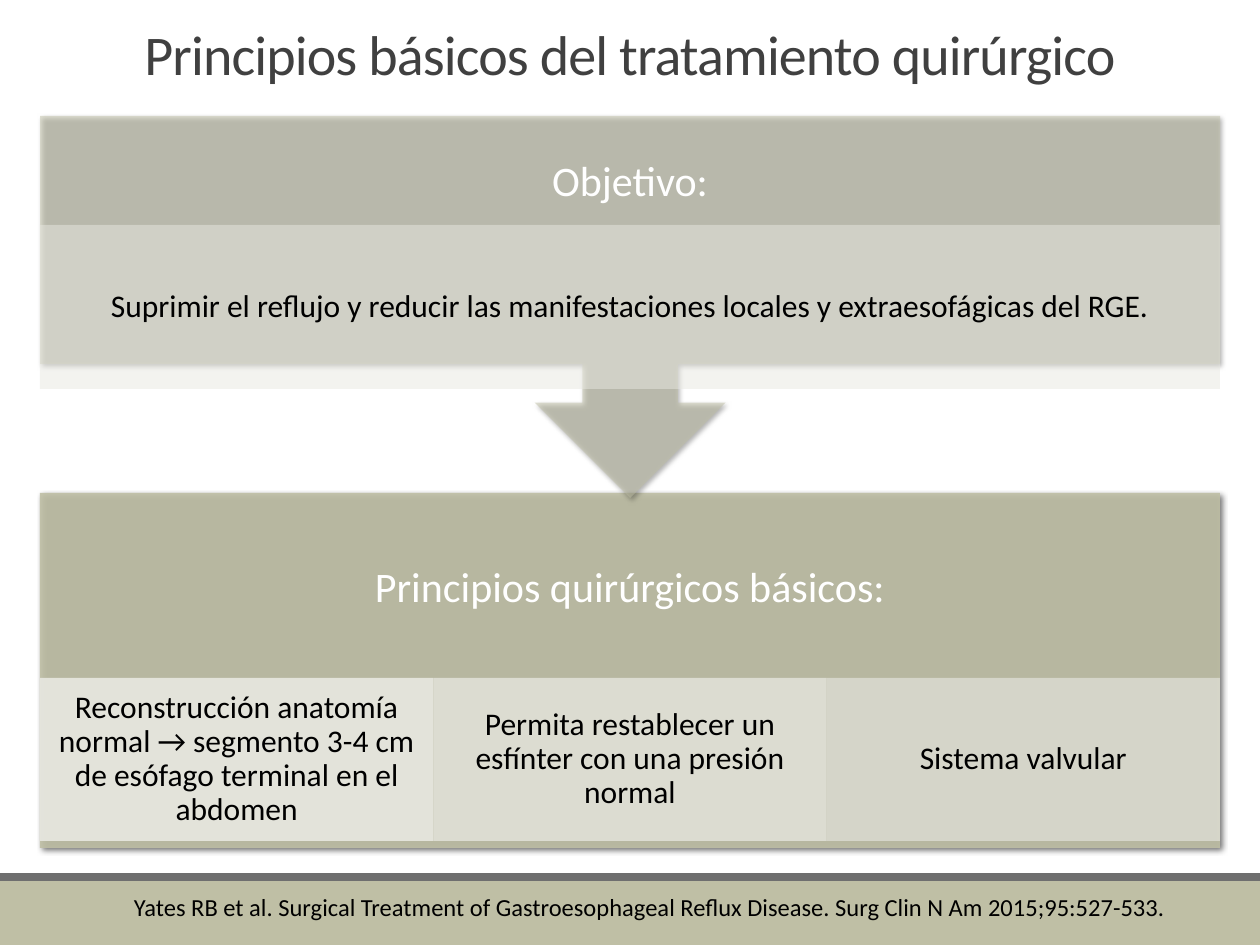
from dataclasses import dataclass

from lxml import etree
from pptx import Presentation
from pptx import util as u
from pptx.dml.color import RGBColor
from pptx.enum import shapes, text
from pptx.oxml.ns import qn

PX_PER_INCH = 126


@dataclass(frozen=True)
class Theme:
    """Colours, font and type sizes of the slide."""
    font: str = "Calibri"
    olive: str = "BFBFA5"
    pale: str = "E8E8E1"
    rule: str = "6F6F6F"
    title: str = "404040"
    light: str = "FFFFFF"
    dark: str = "000000"
    title_size: int = 32
    heading_size: int = 24
    body_size: int = 18
    citation_size: int = 14


THEME = Theme()
PRINCIPLES = [
    ("Reconstrucción anatomía normal → segmento 3-4 cm de esófago terminal en el abdomen", 90),
    ("Permita restablecer un esfínter con una presión normal", 77),
    ("Sistema valvular", 63),
]


def px(length):
    """Turn pixels into EMU."""
    return u.Emu(round(length * u.Inches(1) / PX_PER_INCH))


def add_panel(slide, box, colour, opacity=100, kind=shapes.MSO_SHAPE.RECTANGLE):
    """Add a borderless filled shape with the given opacity in percent."""
    panel = slide.shapes.add_shape(kind, *map(px, box))
    panel.shadow.inherit = False
    panel.fill.solid()
    panel.fill.fore_color.rgb = RGBColor.from_string(colour)
    panel.line.fill.background()
    if opacity < 100:
        tint = panel.element.spPr.find(".//" + qn("a:srgbClr"))
        etree.SubElement(tint, qn("a:alpha"), val=str(opacity * 1000))
    return panel


def add_shadow(panel):
    """Give a panel a soft shadow to the lower right."""
    effects = panel.element.spPr.find(qn("a:effectLst"))
    shadow = etree.SubElement(
        effects, qn("a:outerShdw"), blurRad=str(u.Pt(3)), dist=str(u.Pt(2)),
        dir=str(45 * 60000), algn="ctr", rotWithShape="0")
    tint = etree.SubElement(shadow, qn("a:srgbClr"), val=THEME.dark)
    etree.SubElement(tint, qn("a:alpha"), val="60000")


def write(shape, words, size, colour, align=text.PP_ALIGN.CENTER,
          anchor=text.MSO_ANCHOR.MIDDLE, margins=(12, 6), spacing=0.9):
    """Set and format the single paragraph of a shape."""
    frame = shape.text_frame
    frame.text = words
    frame.word_wrap = True
    frame.vertical_anchor = anchor
    frame.margin_left = frame.margin_right = px(margins[0])
    frame.margin_top = frame.margin_bottom = px(margins[1])
    paragraph = frame.paragraphs[0]
    paragraph.alignment = align
    paragraph.line_spacing = spacing
    run = paragraph.runs[0]
    run.font.name = THEME.font
    run.font.size = u.Pt(size)
    run.font.color.rgb = RGBColor.from_string(colour)
    return run


def add_label(slide, box, *args, **options):
    """Add a text box and return its run."""
    return write(slide.shapes.add_textbox(*map(px, box)), *args, **options)


def add_heading(slide, box, words):
    """Add the white heading of a block."""
    add_label(slide, box, words, THEME.heading_size, THEME.light, margins=(24, 24))


def add_detail(slide, box, words, opacity):
    """Add a pale strip with body text."""
    strip = add_panel(slide, box, THEME.pale, opacity)
    write(strip, words, THEME.body_size, THEME.dark, margins=(18, 4))


def add_principles(slide, left, width):
    """Add the lower block with its row of equal cells."""
    add_shadow(add_panel(slide, (left, 493, width, 355), THEME.olive, 90))
    add_heading(slide, (left, 493, width, 192), "Principios quirúrgicos básicos:")
    cell = width / len(PRINCIPLES)
    for column, (words, opacity) in enumerate(PRINCIPLES):
        add_detail(slide, (left + column * cell, 678, cell, 163), words, opacity)


def add_objective(slide, left, width):
    """Add the upper block, a callout pointing down."""
    callout = add_panel(slide, (left, 116, width, 382), THEME.olive, 50,
                        shapes.MSO_SHAPE.UP_ARROW_CALLOUT)
    callout.rotation = 180
    add_shadow(callout)
    add_heading(slide, (left, 116, width, 134), "Objetivo:")
    add_detail(
        slide, (left, 225, width, 164),
        "Suprimir el reflujo y reducir las manifestaciones locales y extraesofágicas del RGE.", 50)


def main():
    """Build the slide and save it."""
    deck = Presentation()
    deck.slide_width, deck.slide_height = px(1260), px(945)
    slide = deck.slides.add_slide(deck.slide_layouts[6])
    add_panel(slide, (0, 881, 1260, 64), THEME.olive)
    add_panel(slide, (0, 873, 1260, 8), THEME.rule)
    title = add_label(
        slide, (69, 8, 1122, 85), "Principios básicos del tratamiento quirúrgico",
        THEME.title_size, THEME.title, anchor=text.MSO_ANCHOR.BOTTOM, spacing=0.85)
    title.font._element.set("spc", "-50")
    add_principles(slide, left=40, width=1180)
    add_objective(slide, left=40, width=1180)
    add_label(
        slide, (122, 886, 1138, 43),
        "Yates RB et al. Surgical Treatment of Gastroesophageal Reflux Disease. "
        "Surg Clin N Am 2015;95:527-533.",
        THEME.citation_size, THEME.dark, align=text.PP_ALIGN.LEFT,
        anchor=text.MSO_ANCHOR.TOP, spacing=1.0)
    deck.save("out.pptx")


if __name__ == "__main__":
    main()
